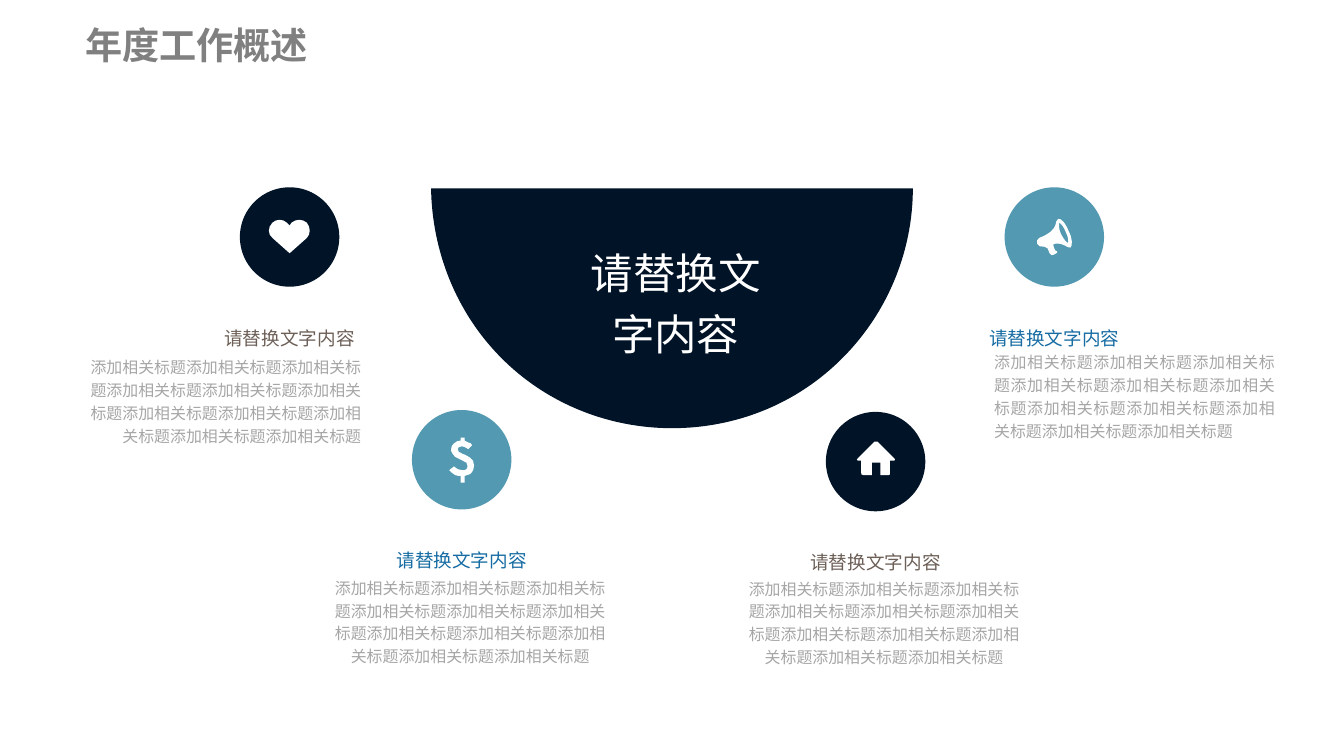
"""Build the annual work overview slide with a half disc and four icon topics."""
import pptx
import pptx.dml.color
import pptx.enum.shapes
import pptx.enum.text
import pptx.oxml
import pptx.oxml.ns
import pptx.util

Inches = pptx.util.Inches
ALIGN = pptx.enum.text.PP_ALIGN
ANCHOR = pptx.enum.text.MSO_ANCHOR

NAVY, TEAL, WHITE = "011327", "5399B2", "FFFFFF"
BROWN, BLUE, GREY, SILVER = "6C5F57", "166CA3", "808080", "A6A6A6"
CJK_FONT, LATIN_FONT = "Noto Sans CJK SC", "Arial"
CIRCLE_SIZE = 1.04
HEADING = "请替换文字内容"
DETAIL = "添加相关标题" * 11

HALF_DISC = [[
    (252, 251), (317, 251, 381, 227, 430, 178), (479, 129, 504, 64, 504, 0), (0, 0),
    (1, 64, 25, 129, 74, 178), (123, 227, 188, 251, 252, 251),
]]
HEART = [[
    (70, 37), (65, 33, 59, 33, 54, 37), (52, 40), (49, 37), (45, 33, 38, 33, 34, 37),
    (29, 42, 29, 49, 34, 53), (52, 69), (70, 53), (74, 49, 74, 42, 70, 37),
]]
HOUSE = [[
    (72, 49), (54, 31), (53, 31, 52, 31, 51, 31), (33, 49), (32, 50, 32, 51, 34, 51),
    (37, 51), (37, 64), (37, 65, 37, 66, 39, 66), (48, 66), (48, 53), (57, 53), (57, 66),
    (66, 66), (67, 66, 67, 65, 67, 64), (67, 51), (71, 51), (72, 51, 73, 50, 72, 49),
]]
DOLLAR = [[
    (63, 37), (59, 41), (56, 39, 54, 38, 52, 38), (51, 38, 50, 38, 49, 39),
    (48, 40, 48, 41, 48, 41), (48, 42, 48, 43, 49, 44), (50, 44, 51, 45, 53, 46),
    (57, 47, 59, 49, 61, 50), (62, 51, 63, 52, 64, 53), (64, 55, 65, 57, 65, 58),
    (65, 60, 64, 62, 64, 63), (63, 65, 62, 66, 61, 67), (59, 68, 58, 69, 55, 69),
    (55, 76), (51, 76), (51, 69), (49, 69, 47, 69, 45, 68), (43, 67, 41, 65, 39, 63),
    (44, 59), (47, 62, 50, 63, 53, 63), (54, 63, 56, 63, 57, 62), (58, 61, 58, 60, 58, 58),
    (58, 57, 58, 56, 57, 55), (56, 55, 55, 54, 53, 53), (49, 51, 47, 50, 45, 49),
    (44, 48, 43, 46, 42, 45), (41, 44, 41, 42, 41, 41), (41, 39, 42, 36, 44, 35),
    (46, 33, 48, 32, 51, 32), (51, 29), (55, 29), (55, 32), (57, 33, 58, 33, 59, 34),
    (61, 34, 62, 35, 63, 37),
]]
MEGAPHONE = [
    [
        (66, 58), (66, 59, 62, 55, 59, 49), (56, 43, 57, 38, 57, 37),
        (58, 37, 62, 41, 64, 47), (67, 53, 67, 58, 66, 58),
    ],
    [
        (67, 46), (64, 38, 59, 32, 56, 33), (51, 35, 59, 44, 36, 53),
        (34, 54, 33, 57, 34, 59), (35, 61, 38, 63, 40, 62), (40, 62, 41, 62, 41, 62),
        (43, 64, 44, 62, 45, 64), (45, 65, 47, 68, 47, 69), (48, 70, 49, 71, 49, 71),
        (50, 71, 53, 70, 54, 69), (55, 69, 55, 68, 55, 67), (54, 67, 53, 66, 53, 66),
        (52, 65, 51, 62, 51, 61), (50, 60, 51, 59, 53, 59), (63, 58, 65, 64, 69, 63),
        (71, 61, 71, 53, 67, 46),
    ],
]


def color(value):
    """Turn a hex string into a colour."""
    return pptx.dml.color.RGBColor.from_string(value)


def write_text(frame, text, size, fill, font=CJK_FONT, bold=False,
               align=ALIGN.CENTER, anchor=ANCHOR.MIDDLE, spacing=1.2):
    """Fill a text frame with one formatted paragraph."""
    frame.word_wrap = True
    frame.auto_size = pptx.enum.text.MSO_AUTO_SIZE.NONE
    frame.vertical_anchor = anchor
    frame.margin_left = frame.margin_right = frame.margin_top = frame.margin_bottom = 0
    paragraph = frame.paragraphs[0]
    paragraph.alignment = align
    paragraph.line_spacing = spacing
    run = paragraph.add_run()
    run.text = text
    run.font.size = pptx.util.Pt(size)
    run.font.bold = bold
    run.font.name = font
    run.font.color.rgb = color(fill)
    east_asian = pptx.oxml.parse_xml(
        f'<a:ea {pptx.oxml.ns.nsdecls("a")} typeface="{CJK_FONT}"/>')
    run.font._element.find(pptx.oxml.ns.qn("a:latin")).addnext(east_asian)


def bend(shape, contours):
    """Join each three line points of a curved segment into one cubic curve."""
    lines = iter(list(shape._element.iter(pptx.oxml.ns.qn("a:lnTo"))))
    for contour in contours:
        for segment in contour[1:]:
            line = next(lines)
            if len(segment) == 2:
                continue
            curve = pptx.oxml.parse_xml(f'<a:cubicBezTo {pptx.oxml.ns.nsdecls("a")}/>')
            line.addprevious(curve)
            for piece in (line, next(lines), next(lines)):
                curve.append(piece[0])
                piece.getparent().remove(piece)


class OverviewSlide:
    """Hold the current slide and draw its elements."""

    def __init__(self, presentation):
        """Add a title-only slide."""
        self.slide = presentation.slides.add_slide(presentation.slide_layouts[5])
        self.shapes = self.slide.shapes

    def paint(self, shape, fill):
        """Give a shape a flat fill without line or shadow."""
        shape.shadow.inherit = False
        shape.fill.solid()
        shape.fill.fore_color.rgb = color(fill)
        shape.line.fill.background()

    def title(self, text, left, top, width, height):
        """Place and format the title placeholder."""
        title = self.shapes.title
        title.left, title.top = Inches(left), Inches(top)
        title.width, title.height = Inches(width), Inches(height)
        write_text(title.text_frame, text, 28, GREY, font=LATIN_FONT, bold=True,
                   align=ALIGN.LEFT, spacing=1.0)

    def text(self, text, left, top, width, height, **text_format):
        """Add a text box."""
        box = self.shapes.add_textbox(Inches(left), Inches(top), Inches(width), Inches(height))
        write_text(box.text_frame, text, **text_format)

    def circle(self, left, top, fill):
        """Add an icon disc."""
        size = Inches(CIRCLE_SIZE)
        oval = pptx.enum.shapes.MSO_SHAPE.OVAL
        self.paint(self.shapes.add_shape(oval, Inches(left), Inches(top), size, size), fill)

    def outline(self, left, top, contours, fill):
        """Add a closed outline from contours in hundredths of an inch."""
        builder = None
        for contour in contours:
            points = [(Inches(left + segment[i] / 100), Inches(top + segment[i + 1] / 100))
                      for segment in contour for i in range(0, len(segment), 2)]
            if builder is None:
                builder = self.shapes.build_freeform(*points[0], scale=1.0)
            else:
                builder.move_to(*points[0])
            builder.add_line_segments(points[1:], close=True)
        shape = builder.convert_to_shape()
        bend(shape, contours)
        self.paint(shape, fill)

    def topic(self, left, top, icon, disc, heading_color, detail_box, align):
        """Add a disc with its icon, heading and detail text."""
        self.circle(left, top, disc)
        self.outline(left, top, icon, WHITE)
        self.text(HEADING, left - 0.33, top + 1.42, 1.7, 0.26, size=14, fill=heading_color)
        self.text(DETAIL, *detail_box, 0.97, size=12, fill=SILVER, font=LATIN_FONT,
                  align=align, anchor=ANCHOR.TOP)


def main():
    """Build and save the presentation."""
    presentation = pptx.Presentation()
    presentation.slide_width, presentation.slide_height = Inches(14.06), Inches(7.91)
    overview = OverviewSlide(presentation)
    overview.title("年度工作概述", 0.89, 0.22, 2.53, 0.49)
    overview.outline(4.51, 1.97, HALF_DISC, NAVY)
    overview.text(HEADING, 5.99, 2.47, 2.16, 1.29, size=32, fill=WHITE)
    topics = [
        (2.51, 1.96, HEART, NAVY, BROWN, (0.79, 3.7, 2.99), ALIGN.RIGHT),
        (4.31, 4.29, DOLLAR, TEAL, BLUE, (3.45, 6.01, 2.94), ALIGN.CENTER),
        (8.64, 4.31, HOUSE, NAVY, BROWN, (7.78, 6.02, 2.94), ALIGN.CENTER),
        (10.51, 1.96, MEGAPHONE, TEAL, BLUE, (10.4, 3.65, 2.94), ALIGN.JUSTIFY),
    ]
    for topic in topics:
        overview.topic(*topic)
    presentation.save("out.pptx")


if __name__ == "__main__":
    main()
